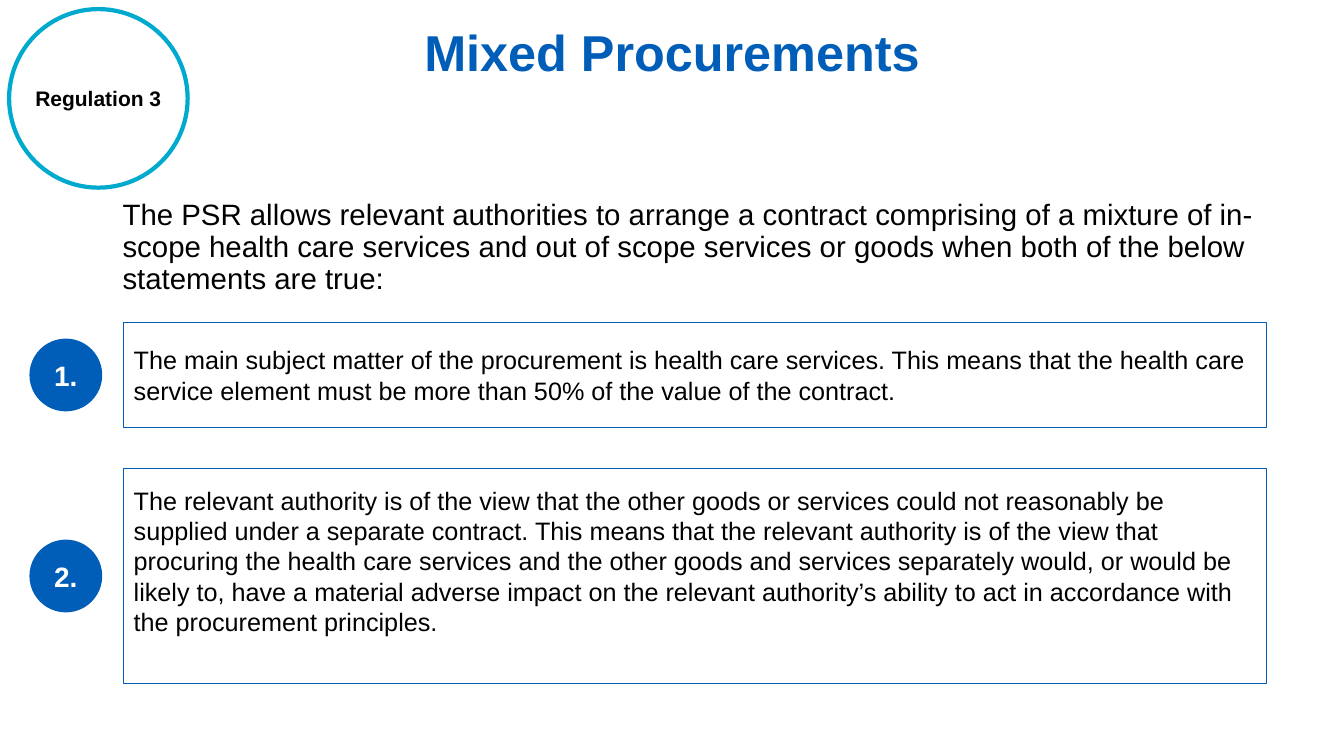
from pptx import Presentation
from pptx.dml.color import RGBColor
from pptx.enum import shapes, text
from pptx.util import Cm, Pt

TITLE = "Mixed Procurements"
BADGE = "Regulation 3"
INTRO = (
    "The PSR allows relevant authorities to arrange a contract comprising of a mixture of "
    "in-scope health care services and out of scope services or goods when both of the below "
    "statements are true:"
)
STATEMENTS = [
    {"number": "1.", "top": 8.13, "height": 2.64, "bottom_inset": 0.13,
     "text": "The main subject matter of the procurement is health care services. This means "
             "that the health care service element must be more than 50% of the value of the "
             "contract."},
    {"number": "2.", "top": 11.81, "height": 5.41, "bottom_inset": 0.89,
     "text": "The relevant authority is of the view that the other goods or services could not "
             "reasonably be supplied under a separate contract. This means that the relevant "
             "authority is of the view that procuring the health care services and the other "
             "goods and services separately would, or would be likely to, have a material "
             "adverse impact on the relevant authority’s ability to act in accordance with the "
             "procurement principles."},
]
THEME = {
    "font": "Arial",
    "blue": "005EB8", "aqua": "00A9CE", "black": "000000", "white": "FFFFFF",
    "title": 36, "intro": 21, "number": 20, "body": 18, "badge": 15,
}
BOX_LEFT, BOX_WIDTH = 3.12, 28.8
DOT_LEFT, DOT_SIZE = 0.76, 1.8
ALIGN = text.PP_ALIGN
ANCHOR = text.MSO_ANCHOR
SHAPE = shapes.MSO_SHAPE


def rgb(name):
    return RGBColor.from_string(THEME[name])


def write(sp, words, size, color="black", bold=False, align=ALIGN.LEFT,
          anchor=ANCHOR.MIDDLE, wrap=True, spacing=None, bottom=0.13):
    tf = sp.text_frame
    tf.word_wrap = wrap
    tf.vertical_anchor = anchor
    tf.margin_bottom = Cm(bottom)
    p = tf.paragraphs[0]
    p.alignment = align
    p.line_spacing = spacing
    r = p.add_run()
    r.text = words
    r.font.name = THEME["font"]
    r.font.size = Pt(THEME[size])
    r.font.bold = bold
    r.font.color.rgb = rgb(color)


def add_text(s, box, words, size, **fmt):
    write(s.shapes.add_textbox(*map(Cm, box)), words, size, **fmt)


def add_shape(s, kind, box, fill, line, width):
    sp = s.shapes.add_shape(kind, *map(Cm, box))
    sp.shadow.inherit = False
    if fill:
        sp.fill.solid()
        sp.fill.fore_color.rgb = rgb(fill)
    else:
        sp.fill.background()
    sp.line.color.rgb = rgb(line)
    sp.line.width = Pt(width)
    return sp


def add_statement(s, item):
    box = (BOX_LEFT, item["top"], BOX_WIDTH, item["height"])
    sp = add_shape(s, SHAPE.RECTANGLE, box, None, "blue", 1)
    write(sp, item["text"], "body", bottom=item["bottom_inset"])
    dot_top = item["top"] + (item["height"] - DOT_SIZE) / 2
    dot = add_shape(s, SHAPE.OVAL, (DOT_LEFT, dot_top, DOT_SIZE, DOT_SIZE), "blue", "blue", 1)
    write(dot, item["number"], "number", color="white", bold=True, align=ALIGN.CENTER)


def main():
    prs = Presentation()
    prs.slide_width, prs.slide_height = Cm(33.87), Cm(19.05)
    s = prs.slides.add_slide(prs.slide_layouts[6])
    add_text(s, (2.84, 4.93, 29.29, 3), INTRO, "intro", anchor=ANCHOR.TOP, spacing=0.9)
    add_text(s, (10.21, 0.03, 13.46, 2.51), TITLE, "title", color="blue", bold=True,
             align=ALIGN.CENTER)
    add_shape(s, SHAPE.OVAL, (0.23, 0.23, 4.5, 4.5), "white", "aqua", 3)
    add_text(s, (0.64, 2.03, 3.71, 0.89), BADGE, "badge", bold=True, anchor=ANCHOR.TOP,
             wrap=False)
    for item in STATEMENTS:
        add_statement(s, item)
    prs.save("out.pptx")


if __name__ == "__main__":
    main()
